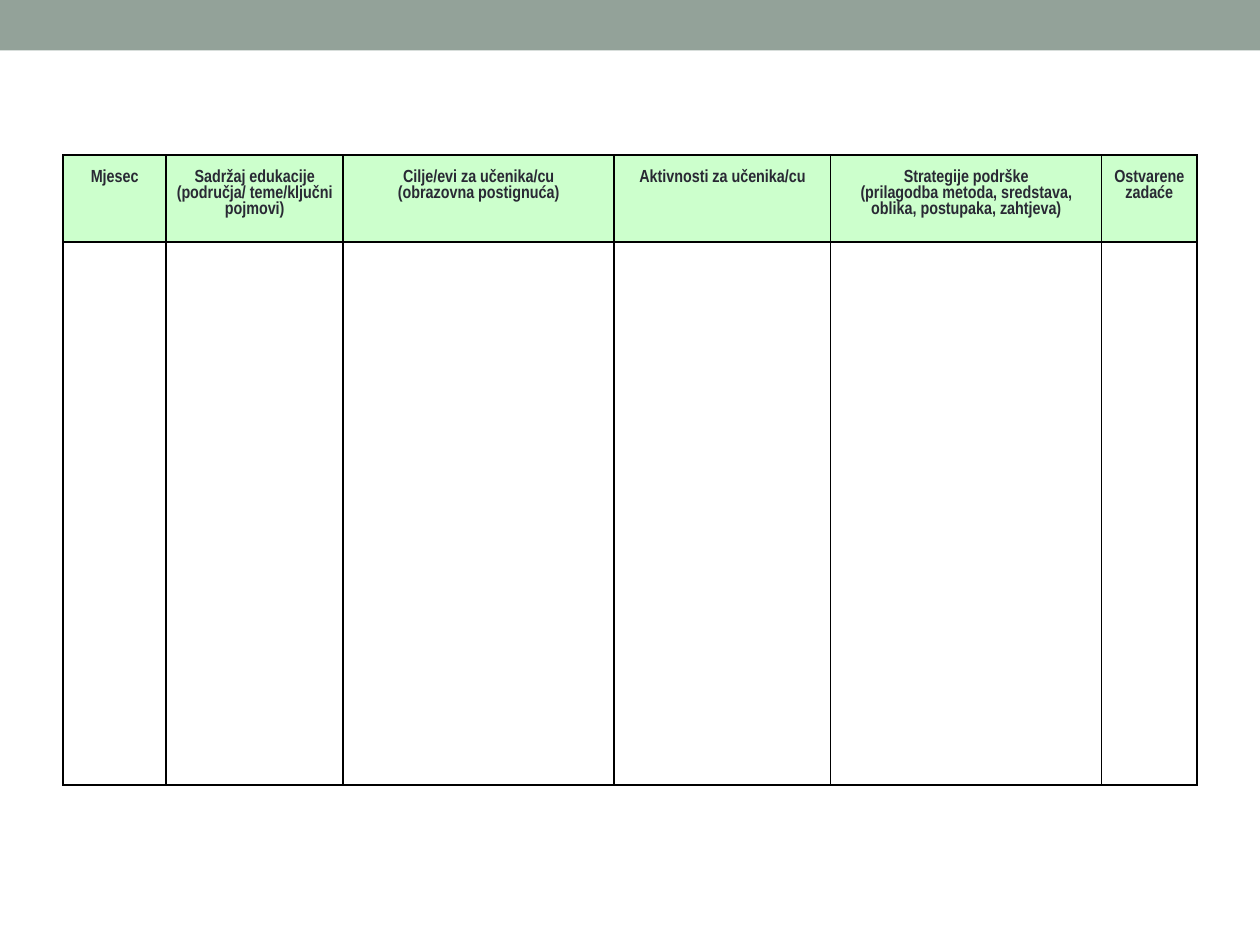
from dataclasses import dataclass

from lxml.etree import SubElement
from pptx import Presentation
from pptx.dml.color import RGBColor as RGB
from pptx.enum.shapes import MSO_SHAPE as Shape
from pptx.enum.text import PP_ALIGN as Align
from pptx.oxml.ns import qn
from pptx.util import Inches, Pt


@dataclass(frozen=True)
class Theme:
    band: RGB = RGB(0x93, 0xA2, 0x99)
    header: RGB = RGB(0xCC, 0xFF, 0xCC)
    text: RGB = RGB(0x29, 0x29, 0x34)
    border: str = "000000"
    border_width: int = Pt(1)
    font: str = "Arial Narrow"
    size: int = Pt(10)
    line_spacing: float = 1.0


THEME = Theme()
SLIDE_W, SLIDE_H = Inches(10), Inches(7.5)

# Plan columns: width as a share of the table, heading lines
PLAN = [
    (0.091, ["Mjesec"]),
    (0.156, ["Sadržaj edukacije", "(područja/ teme/ključni pojmovi)"]),
    (0.239, ["Cilje/evi za učenika/cu", "(obrazovna postignuća)"]),
    (0.191, ["Aktivnosti za učenika/cu"]),
    (0.239, ["Strategije podrške",
             "(prilagodba metoda, sredstava, oblika, postupaka, zahtjeva)"]),
    (0.084, ["Ostvarene zadaće"]),
]
ROW_SHARES = (0.138, 0.862)


def add_band(slide):
    band = slide.shapes.add_shape(Shape.RECTANGLE, 0, 0, SLIDE_W, Inches(0.4))
    band.shadow.inherit = False
    band.fill.solid()
    band.fill.fore_color.rgb = THEME.band
    band.line.fill.background()


def set_borders(cell):
    properties = cell._tc.get_or_add_tcPr()
    for position, side in enumerate(("a:lnL", "a:lnR", "a:lnT", "a:lnB")):
        line = SubElement(properties, qn(side), w=str(THEME.border_width))
        fill = SubElement(line, qn("a:solidFill"))
        SubElement(fill, qn("a:srgbClr"), val=THEME.border)
        properties.insert(position, line)  # borders precede the cell fill


def write_heading(cell, lines):
    cell.margin_left = cell.margin_right = Inches(0.06)
    cell.margin_top, cell.margin_bottom = Inches(0.12), 0
    cell.text = "\n".join(lines)
    for paragraph in cell.text_frame.paragraphs:
        paragraph.alignment = Align.CENTER
        paragraph.line_spacing = THEME.line_spacing
        font = paragraph.font
        font.name, font.size, font.bold = THEME.font, THEME.size, True
        font.color.rgb = THEME.text


def add_plan(slide):
    width, height = int(SLIDE_W * 0.9), int(SLIDE_H * 2 / 3)
    left, top = int(SLIDE_W * 0.05), Inches(1.23)
    table = slide.shapes.add_table(
        len(ROW_SHARES), len(PLAN), left, top, width, height).table
    table.first_row = table.horz_banding = False
    for row, share in zip(table.rows, ROW_SHARES):
        row.height = int(height * share)

    for index, (share, heading) in enumerate(PLAN):
        table.columns[index].width = int(width * share)
        header, entry = table.cell(0, index), table.cell(1, index)
        header.fill.solid()
        header.fill.fore_color.rgb = THEME.header
        entry.fill.background()
        write_heading(header, heading)
        set_borders(header)
        set_borders(entry)


def main():
    deck = Presentation()
    deck.slide_width, deck.slide_height = SLIDE_W, SLIDE_H
    slide = deck.slides.add_slide(deck.slide_layouts[6])
    add_band(slide)
    add_plan(slide)
    deck.save("out.pptx")


if __name__ == "__main__":
    main()
